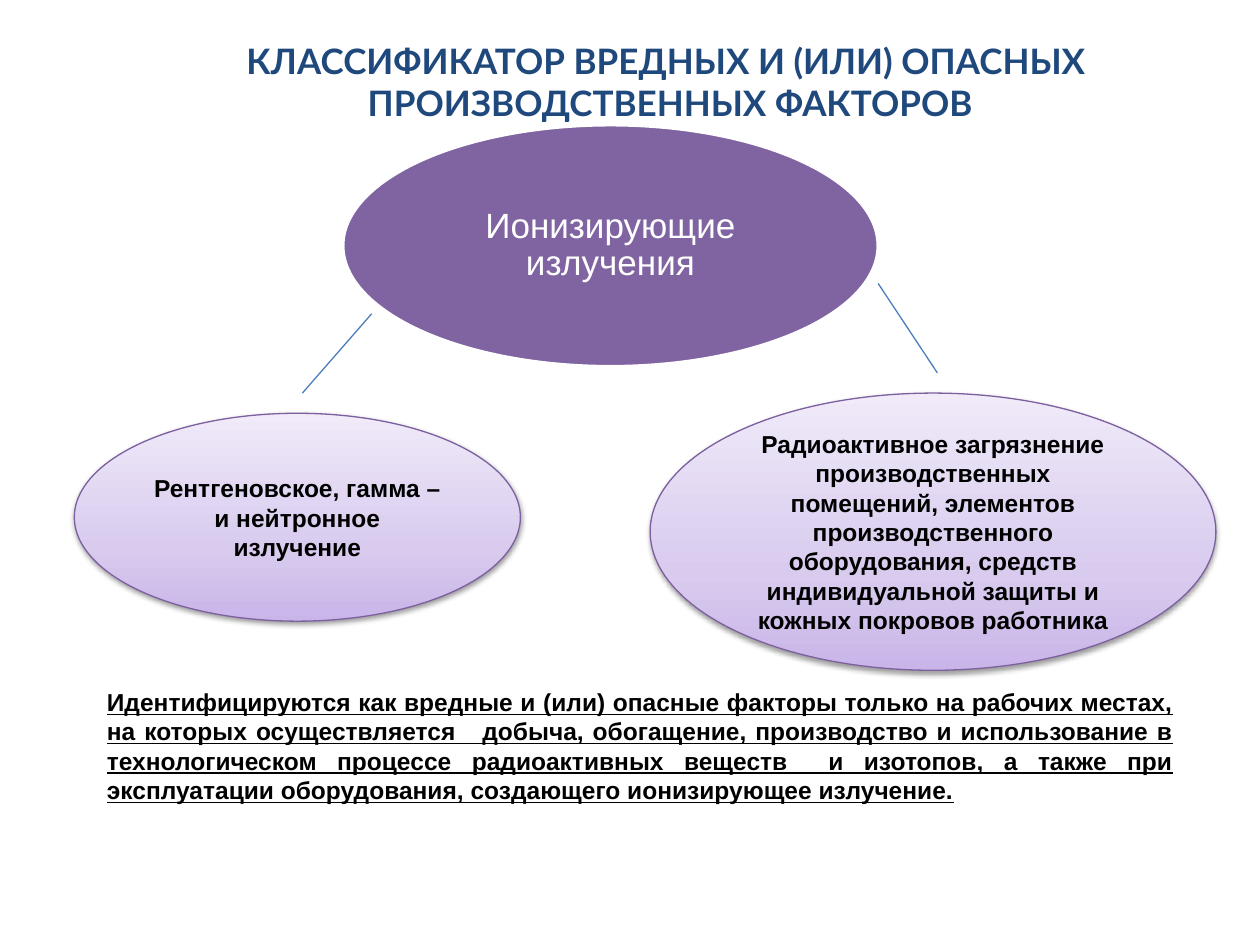
import pptx
import pptx.util
import pptx.dml.color
import pptx.enum.shapes
import pptx.enum.text
import pptx.oxml
import pptx.oxml.ns
import lxml.etree

Inches = pptx.util.Inches
Pt = pptx.util.Pt
ALIGN = pptx.enum.text.PP_ALIGN
MIDDLE = pptx.enum.text.MSO_ANCHOR.MIDDLE
OVAL = pptx.enum.shapes.MSO_SHAPE.OVAL
RGB = pptx.dml.color.RGBColor.from_string
NAMESPACE = pptx.oxml.ns.nsdecls("a")

COLORS = {
    "title": "1F497D", "purple": "8064A2", "outline": "7D60A0",
    "connector": "4B7EBC", "white": "FFFFFF", "black": "000000",
}
GRADIENT = [(0, "C9B5E8"), (35, "D8CBEE"), (100, "F0EAF9")]


def write(shape, text, size, color, font="Arial", bold=True, underline=None,
          align=ALIGN.CENTER, inset=None):
    frame = shape.text_frame
    frame.text = text
    frame.word_wrap = True
    frame.vertical_anchor = MIDDLE
    if inset is not None:
        frame.margin_left = frame.margin_right = Inches(inset)
        frame.margin_top = frame.margin_bottom = Inches(inset)
    para = frame.paragraphs[0]
    para.alignment = align
    for span in para.runs:
        span.font.name = font
        span.font.size = Pt(size)
        span.font.bold = bold
        span.font.underline = underline
        span.font.color.rgb = RGB(COLORS[color])
    return para


deck = pptx.Presentation()
deck.slide_width, deck.slide_height = Inches(10), Inches(7.5)
page = deck.slides.add_slide(deck.slide_layouts[6])

# Title
title = page.shapes.add_textbox(Inches(0.83), Inches(0.06), Inches(8.98), Inches(1.18))
write(title, "КЛАССИФИКАТОР ВРЕДНЫХ И (ИЛИ) ОПАСНЫХ \vПРОИЗВОДСТВЕННЫХ ФАКТОРОВ",
      20, "title", font="Lato", inset=0)

# Lines from the main factor to its kinds
for x1, y1, x2, y2 in [(2.95, 2.49, 2.4, 3.12), (6.97, 2.25, 7.44, 2.96)]:
    link = page.shapes.add_connector(
        pptx.enum.shapes.MSO_CONNECTOR.STRAIGHT,
        Inches(x1), Inches(y1), Inches(x2), Inches(y2))
    link.line.color.rgb = RGB(COLORS["connector"])
    link.line.width = Pt(0.75)
    lxml.etree.SubElement(link._element.spPr, pptx.oxml.ns.qn("a:effectLst"))

# Main factor
factor = page.shapes.add_shape(OVAL, Inches(2.72), Inches(0.99), Inches(4.25), Inches(1.92))
factor.shadow.inherit = False
factor.fill.solid()
factor.fill.fore_color.rgb = RGB(COLORS["purple"])
factor.line.color.rgb = RGB(COLORS["white"])
factor.line.width = Pt(2)
label = write(factor, "Ионизирующие излучения", 20, "white", bold=False, inset=0.03)
label.line_spacing = 0.9

# Kinds of radiation: gradient ovals with a soft shadow
kinds = [
    (0.59, 3.28, 3.54, 1.65, "Рентгеновское, гамма – и нейтронное излучение"),
    (5.16, 3.12, 4.49, 2.2,
     "Радиоактивное загрязнение производственных помещений, элементов "
     "производственного оборудования, средств индивидуальной защиты и "
     "кожных покровов работника"),
]
for left, top, width, height, text in kinds:
    oval = page.shapes.add_shape(OVAL, Inches(left), Inches(top), Inches(width), Inches(height))
    oval.line.color.rgb = RGB(COLORS["outline"])
    oval.line.width = Pt(0.75)
    oval.fill.gradient()
    oval.fill.gradient_angle = 90
    properties = oval._element.spPr
    stops = properties.find(".//" + pptx.oxml.ns.qn("a:gsLst"))
    for stop in list(stops):
        stops.remove(stop)
    for position, color in GRADIENT:
        stops.append(pptx.oxml.parse_xml(
            f'<a:gs {NAMESPACE} pos="{position * 1000}"><a:srgbClr val="{color}"/></a:gs>'))
    oval.shadow.inherit = False
    properties.find(pptx.oxml.ns.qn("a:effectLst")).append(pptx.oxml.parse_xml(
        f'<a:outerShdw {NAMESPACE} blurRad="{Pt(3.1)}" dist="{Pt(1.6)}" dir="5400000" '
        f'rotWithShape="0"><a:srgbClr val="{COLORS["black"]}"><a:alpha val="38000"/>'
        '</a:srgbClr></a:outerShdw>'))
    write(oval, text, 14, "black")

# Note on identification
note = page.shapes.add_textbox(Inches(0.75), Inches(5.4), Inches(8.66), Inches(1.04))
write(note,
      "Идентифицируются как вредные и (или) опасные факторы только на рабочих местах, "
      "на которых осуществляется   добыча, обогащение, производство и использование в "
      "технологическом процессе радиоактивных веществ  и изотопов, а также при "
      "эксплуатации оборудования, создающего ионизирующее излучение.",
      14, "black", underline=True, align=ALIGN.JUSTIFY)

deck.save("out.pptx")
